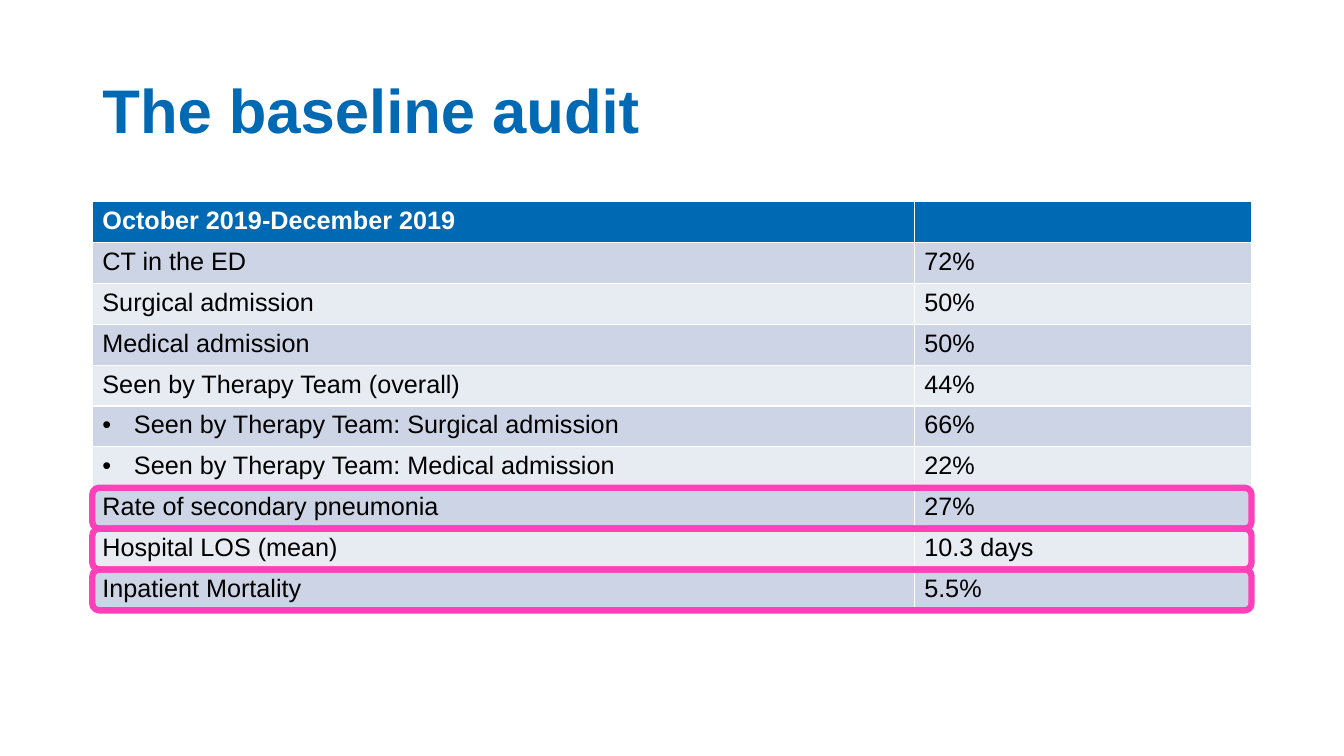
from dataclasses import dataclass

from lxml.etree import SubElement
from pptx import Presentation
from pptx.dml.color import RGBColor
from pptx.enum.shapes import MSO_SHAPE
from pptx.enum.text import MSO_ANCHOR, PP_ALIGN
from pptx.oxml.ns import qn
from pptx.util import Pt


@dataclass(frozen=True)
class Theme:
    font: str = "Arial"
    blue: RGBColor = RGBColor(0x00, 0x69, 0xB3)
    white: RGBColor = RGBColor(0xFF, 0xFF, 0xFF)
    black: RGBColor = RGBColor(0x00, 0x00, 0x00)
    dark: RGBColor = RGBColor(0xCC, 0xD4, 0xE5)
    light: RGBColor = RGBColor(0xE7, 0xEB, 0xF2)
    pink: RGBColor = RGBColor(0xFF, 0x40, 0xB8)
    title: int = 44
    body: int = 18


theme = Theme()
LEFT, WIDTH = 66, 828
TOP, ROW = 144, 29.2
INDENT = 22.5

# Label, value, bulleted, outlined
audit = [
    ("October 2019-December 2019", "", False, False),
    ("CT in the ED", "72%", False, False),
    ("Surgical admission", "50%", False, False),
    ("Medical admission", "50%", False, False),
    ("Seen by Therapy Team (overall)", "44%", False, False),
    ("Seen by Therapy Team: Surgical admission", "66%", True, False),
    ("Seen by Therapy Team: Medical admission", "22%", True, False),
    ("Rate of secondary pneumonia", "27%", False, True),
    ("Hospital LOS (mean)", "10.3 days", False, True),
    ("Inpatient Mortality", "5.5%", False, True),
]


def add_run(para, text, size, color, bold):
    run = para.add_run()
    run.text = text
    run.font.name = theme.font
    run.font.size = Pt(size)
    run.font.bold = bold
    run.font.color.rgb = color


def add_bullet(para):
    props = para._p.get_or_add_pPr()
    props.set("marL", str(Pt(INDENT)))
    props.set("indent", str(-Pt(INDENT)))
    SubElement(props, qn("a:buFont"), typeface=theme.font)
    SubElement(props, qn("a:buChar"), char="•")


deck = Presentation()
deck.slide_width, deck.slide_height = Pt(960), Pt(540)
slide = deck.slides.add_slide(deck.slide_layouts[5])

# Title
title = slide.shapes.title
title.left, title.top = Pt(LEFT), Pt(28.75)
title.width, title.height = Pt(WIDTH), Pt(104.4)
title.text_frame.vertical_anchor = MSO_ANCHOR.MIDDLE
head = title.text_frame.paragraphs[0]
head.alignment = PP_ALIGN.LEFT
head.line_spacing = 0.9
add_run(head, "The baseline audit", theme.title, theme.blue, True)

# Audit table; its default style draws the white borders
table = slide.shapes.add_table(
    len(audit), 2, Pt(LEFT), Pt(TOP), Pt(WIDTH), Pt(ROW * len(audit))
).table
table.columns[0].width, table.columns[1].width = Pt(587), Pt(241)

for i, (label, value, nested, marked) in enumerate(audit):
    table.rows[i].height = Pt(ROW)
    first = i == 0
    fill = theme.blue if first else theme.dark if i % 2 else theme.light
    color = theme.white if first else theme.black
    for cell, text in zip(table.rows[i].cells, (label, value)):
        cell.fill.solid()
        cell.fill.fore_color.rgb = fill
        if text:
            add_run(cell.text_frame.paragraphs[0], text, theme.body, color, first)
    if nested:
        add_bullet(table.cell(i, 0).text_frame.paragraphs[0])

    # Outline round a key outcome
    if marked:
        frame = slide.shapes.add_shape(
            MSO_SHAPE.ROUNDED_RECTANGLE,
            Pt(LEFT), Pt(TOP + ROW * i), Pt(WIDTH), Pt(ROW),
        )
        frame.shadow.inherit = False
        frame.fill.background()
        frame.line.color.rgb = theme.pink
        frame.line.width = Pt(4.5)

deck.save("out.pptx")
